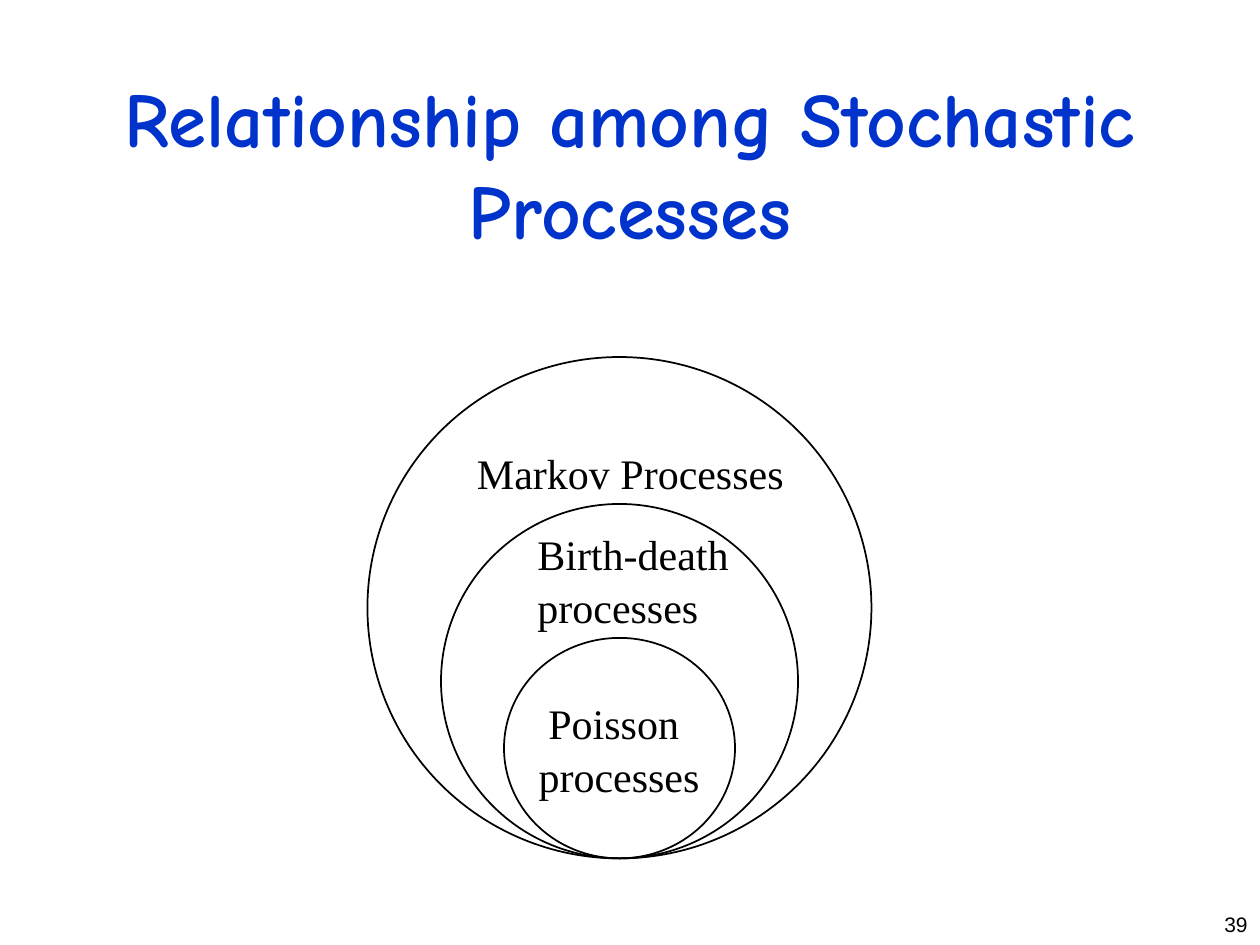
from lxml import etree
from pptx import Presentation
from pptx.dml.color import RGBColor
from pptx.enum.shapes import MSO_SHAPE
from pptx.enum.text import MSO_ANCHOR, MSO_AUTO_SIZE, PP_ALIGN
from pptx.util import Pt

OVAL = MSO_SHAPE.OVAL
MIDDLE = MSO_ANCHOR.MIDDLE
FIT_SHAPE = MSO_AUTO_SIZE.SHAPE_TO_FIT_TEXT
LEFT, CENTER, RIGHT = PP_ALIGN.LEFT, PP_ALIGN.CENTER, PP_ALIGN.RIGHT

COLORS = {"title": "0033CC", "ink": "000000"}
CENTER_X, BOTTOM = 354, 490.5  # the nested ovals share this lowest point


class SlideBuilder:
    def __init__(self, page):
        self.page = page

    def text(self, bounds, lines, font, size, color="ink", align=LEFT, bold=False):
        box = self.page.shapes.add_textbox(*map(Pt, bounds))
        frame = box.text_frame
        frame.word_wrap = True
        frame.vertical_anchor = MIDDLE
        frame.text = "\n".join(lines)
        for para in frame.paragraphs:
            para.alignment = align
            para.font.name = font
            para.font.size = Pt(size)
            para.font.bold = bold
            para.font.color.rgb = RGBColor.from_string(COLORS[color])
        return frame

    def label(self, bounds, lines, align=LEFT):
        """Add an oval's caption, unwrapped and slightly leaded."""
        frame = self.text(bounds, lines, "Times New Roman", 24, align=align)
        frame.word_wrap = False
        frame.auto_size = FIT_SHAPE
        for para in frame.paragraphs:
            para.line_spacing = 1.05

    def oval(self, width, height):
        """Add an outlined oval standing on the shared lowest point."""
        left, top = CENTER_X - width / 2, BOTTOM - height
        oval = self.page.shapes.add_shape(OVAL, Pt(left), Pt(top), Pt(width), Pt(height))
        oval.shadow.inherit = False
        oval.fill.background()
        oval.line.color.rgb = RGBColor.from_string(COLORS["ink"])
        oval.line.width = Pt(1)


def main():
    deck = Presentation()
    deck.slide_width, deck.slide_height = Pt(720), Pt(540)
    builder = SlideBuilder(deck.slides.add_slide(deck.slide_layouts[6]))

    builder.text((54, 48, 612, 90), ["Relationship among Stochastic Processes"],
                 "Comic Neue", 44, "title", CENTER, bold=True)
    builder.text((666, 516, 54, 24), ["39"], "Arial", 12, align=RIGHT)

    builder.label((300, 394.5, 107.5, 65.5), ["Poisson ", "processes"], CENTER)
    builder.oval(132, 126)
    builder.label((300, 298, 131, 65.5), ["Birth-death", "processes"])
    builder.oval(204, 202.5)
    builder.label((265.5, 251.5, 191.5, 36), ["Markov Processes"])
    builder.oval(288, 286.5)

    deck.save("out.pptx")


if __name__ == "__main__":
    main()
